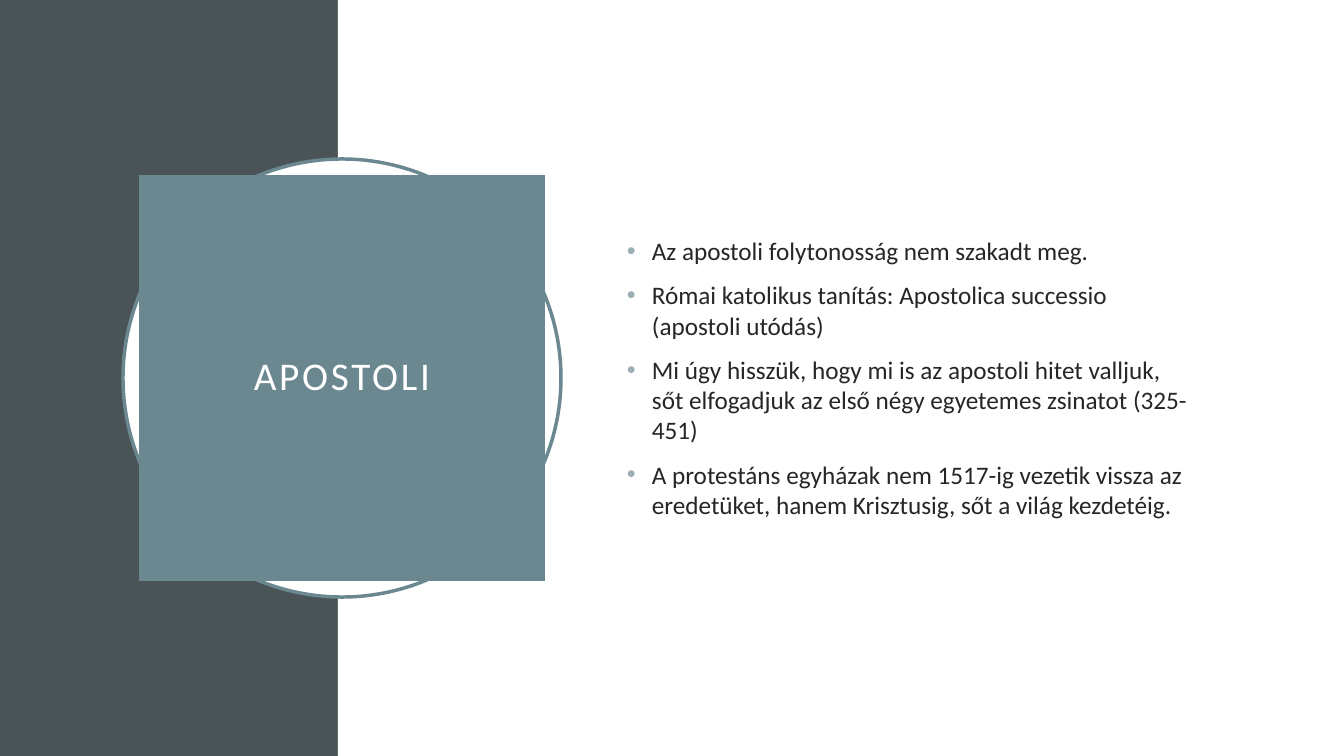
from lxml import etree
from pptx import Presentation, util as u
from pptx.dml.color import RGBColor
from pptx.enum import shapes, text
from pptx.oxml.ns import qn

TITLE = "APOSTOLI"
POINTS = [
    "Az apostoli folytonosság nem szakadt meg.",
    "Római katolikus tanítás: Apostolica successio (apostoli utódás)",
    "Mi úgy hisszük, hogy mi is az apostoli hitet valljuk, sőt elfogadjuk "
    "az első négy egyetemes zsinatot (325-451)",
    "A protestáns egyházak nem 1517-ig vezetik vissza az eredetüket, "
    "hanem Krisztusig, sőt a világ kezdetéig.",
]
WIDE, HIGH = 1344, 756
BAND = 338
MID = 342, 378
RING, TILE = 438, 406
BODY = 617, 154, 587, 447
INDENT = 25
DARK, TEAL, PALE, INK, WHITE = "4A5356", "6B8891", "9BAFB5", "262626", "FFFFFF"
KIND = shapes.MSO_SHAPE


def px(n):
    return u.Emu(round(n * 914400 / 100.8))


def color(code):
    return RGBColor.from_string(code)


def centre(size):
    return MID[0] - size / 2, MID[1] - size / 2, size, size


def draw(slide, kind, box, fill, line=None):
    shape = slide.shapes.add_shape(kind, *map(px, box))
    shape.shadow.inherit = False
    shape.fill.solid()
    shape.fill.fore_color.rgb = color(fill)
    if line:
        shape.line.color.rgb = color(line)
        shape.line.width = u.Pt(2.5)
    else:
        shape.line.fill.background()
    return shape


def style(para, size, code):
    para.font.name = "Calibri"
    para.font.size = u.Pt(size)
    para.font.color.rgb = color(code)


def bullet(para):
    props = para._p.get_or_add_pPr()
    props.set("marL", str(px(INDENT)))
    props.set("indent", str(-px(INDENT)))
    tint = etree.SubElement(props, qn("a:buClr"))
    etree.SubElement(tint, qn("a:srgbClr"), val=PALE)
    etree.SubElement(props, qn("a:buFont"), typeface="Arial")
    etree.SubElement(props, qn("a:buChar"), char="•")


def title(shape):
    frame = shape.text_frame
    frame.word_wrap = True
    frame.vertical_anchor = text.MSO_ANCHOR.MIDDLE
    frame.margin_left = frame.margin_right = px(20)
    frame.margin_top = frame.margin_bottom = px(20)
    para = frame.paragraphs[0]
    para.text = TITLE
    para.alignment = text.PP_ALIGN.CENTER
    para.line_spacing = 0.9
    style(para, 28, WHITE)
    para.runs[0].font._element.set("spc", "200")


def body(slide):
    frame = slide.shapes.add_textbox(*map(px, BODY)).text_frame
    frame.word_wrap = True
    frame.vertical_anchor = text.MSO_ANCHOR.MIDDLE
    for i, point in enumerate(POINTS):
        para = frame.add_paragraph() if i else frame.paragraphs[0]
        para.text = point
        para.space_before = u.Pt(10)
        bullet(para)
        style(para, 18, INK)


def main():
    """Build the slide and save it."""
    deck = Presentation()
    deck.slide_width, deck.slide_height = px(WIDE), px(HIGH)
    slide = deck.slides.add_slide(deck.slide_layouts[6])
    draw(slide, KIND.RECTANGLE, (0, 0, BAND, HIGH), DARK)
    draw(slide, KIND.RECTANGLE, (BAND, 0, WIDE - BAND, HIGH), WHITE)
    draw(slide, KIND.OVAL, centre(RING), WHITE, TEAL)
    title(draw(slide, KIND.RECTANGLE, centre(TILE), TEAL))
    body(slide)
    deck.save("out.pptx")


if __name__ == "__main__":
    main()
